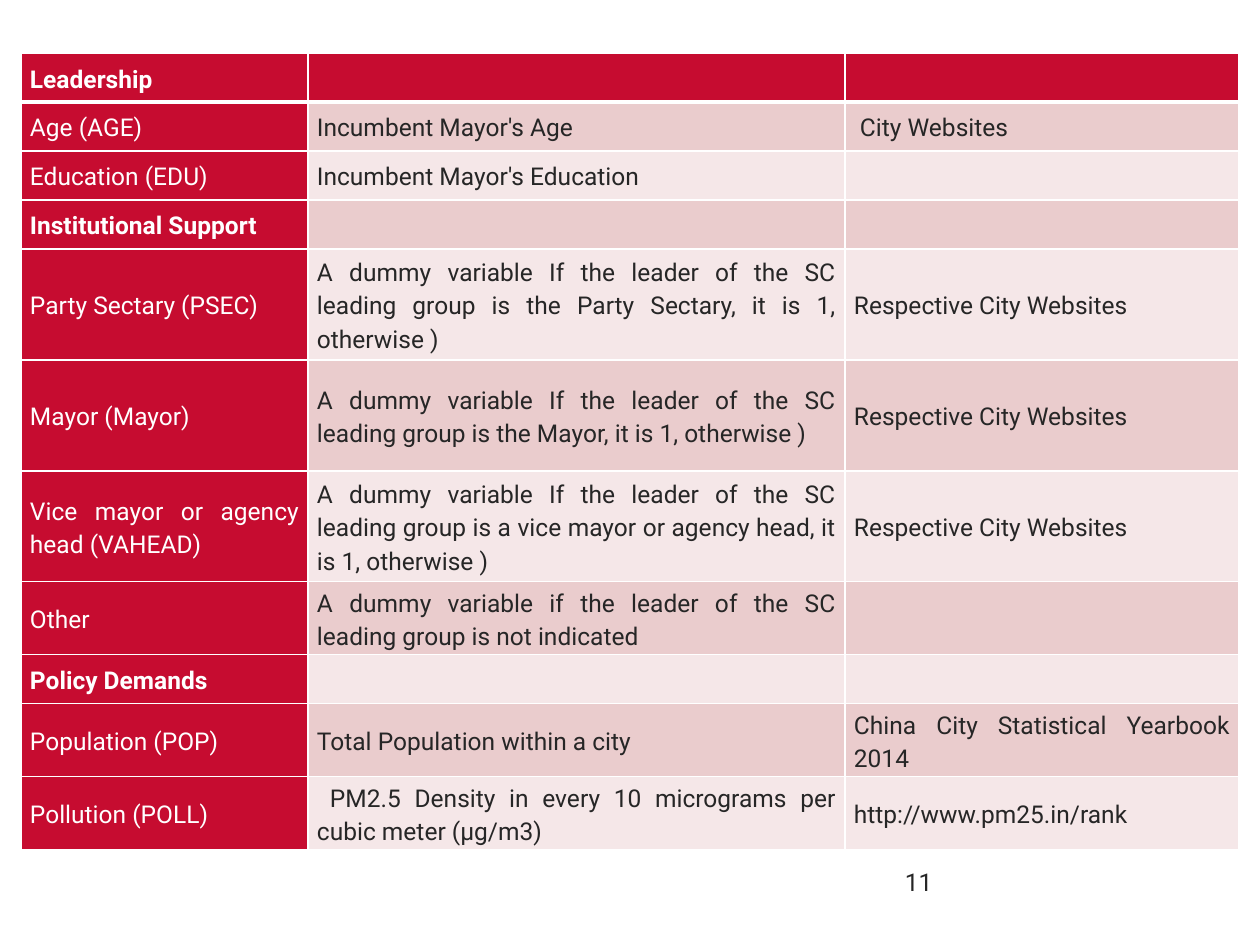
from lxml.etree import SubElement
from pptx import Presentation
from pptx.dml.color import RGBColor
from pptx.enum.text import MSO_ANCHOR, PP_ALIGN
from pptx.oxml.ns import qn
from pptx.util import Emu, Pt

EMU_PER_PX = 914400 // 126
RED, PINK, PALE = "C60C30", "EACCCD", "F5E7E8"
WHITE, DARK = "FFFFFF", "262626"

COL_WIDTHS = [287, 537, 394]
SECTIONS = {"Leadership", "Institutional Support", "Policy Demands"}
# Row height, then variable, definition and source
ROWS = [
    (49, "Leadership", "", ""),
    (49, "Age (AGE)", "Incumbent Mayor's Age", "City Websites"),
    (49, "Education (EDU)", "Incumbent Mayor's Education", ""),
    (49, "Institutional Support", "", ""),
    (111, "Party Sectary (PSEC)",
     "A dummy variable If the leader of the SC leading group is the Party Sectary, "
     "it is 1, otherwise )", "Respective City Websites"),
    (111, "Mayor (Mayor)",
     "A dummy variable If the leader of the SC leading group is the Mayor, "
     "it is 1, otherwise )", "Respective City Websites"),
    (111, "Vice mayor or agency head (VAHEAD)",
     "A dummy variable If the leader of the SC leading group is a vice mayor or "
     "agency head, it is 1, otherwise )", "Respective City Websites"),
    (73, "Other",
     "A dummy variable if the leader of the SC leading group is not indicated", ""),
    (49, "Policy Demands", "", ""),
    (73, "Population (POP)", "Total Population within a city",
     "China City Statistical Yearbook 2014"),
    (73, "Pollution (POLL)",
     "PM2.5 Density in every 10 micrograms per cubic meter (μg/m3)",
     "http://www.pm25.in/rank"),
]
FIRST_LINE_INDENTS = {(1, 2): 6, (10, 1): 13}


def px(n):
    return Emu(n * EMU_PER_PX)


def color(hex_string):
    return RGBColor.from_string(hex_string)


def add_run(p, text, hex_string, bold=False):
    r = p.add_run()
    r.text = text
    r.font.name = "Roboto"
    r.font.size = Pt(14)
    r.font.bold = bold
    r.font.color.rgb = color(hex_string)


def set_borders(cell, top, bottom):
    """Draw white borders; widths are in points, 1 at the sides."""
    tc_pr = cell._tc.get_or_add_tcPr()
    for side, width in (("L", 1), ("R", 1), ("T", top), ("B", bottom)):
        ln = SubElement(tc_pr, qn(f"a:ln{side}"), w=str(Pt(width)))
        SubElement(SubElement(ln, qn("a:solidFill")), qn("a:srgbClr"), val=WHITE)


def fill_cell(cell, row, col, text):
    set_borders(cell, top=3 if row == 1 else 1, bottom=3 if row == 0 else 1)
    is_red = row == 0 or col == 0
    cell.fill.solid()
    cell.fill.fore_color.rgb = color(RED if is_red else PINK if row % 2 else PALE)
    cell.margin_left = cell.margin_right = px(9)
    cell.margin_top = cell.margin_bottom = 0
    cell.vertical_anchor = MSO_ANCHOR.MIDDLE
    if not text:
        return
    p = cell.text_frame.paragraphs[0]
    p.alignment = PP_ALIGN.JUSTIFY
    p.line_spacing = 1.15
    if (row, col) in FIRST_LINE_INDENTS:
        indent = px(FIRST_LINE_INDENTS[row, col])
        p._p.get_or_add_pPr().set("indent", str(indent))
    add_run(p, text, WHITE if is_red else DARK, text in SECTIONS)


def add_variable_table(s):
    heights = [row[0] for row in ROWS]
    table = s.shapes.add_table(
        len(ROWS), len(COL_WIDTHS), px(21), px(53),
        px(sum(COL_WIDTHS)), px(sum(heights))).table
    for column, width in zip(table.columns, COL_WIDTHS):
        column.width = px(width)
    for i, (height, *texts) in enumerate(ROWS):
        table.rows[i].height = px(height)
        for j, text in enumerate(texts):
            fill_cell(table.cell(i, j), i, j, text)


def add_page_number(s, number):
    tf = s.shapes.add_textbox(px(829), px(861), px(116), px(63)).text_frame
    tf.word_wrap = True
    p = tf.paragraphs[0]
    p.alignment = PP_ALIGN.RIGHT
    add_run(p, number, DARK)


def main():
    prs = Presentation()
    prs.slide_width, prs.slide_height = px(1260), px(945)
    s = prs.slides.add_slide(prs.slide_layouts[6])
    add_page_number(s, "11")
    add_variable_table(s)
    prs.save("out.pptx")


if __name__ == "__main__":
    main()
